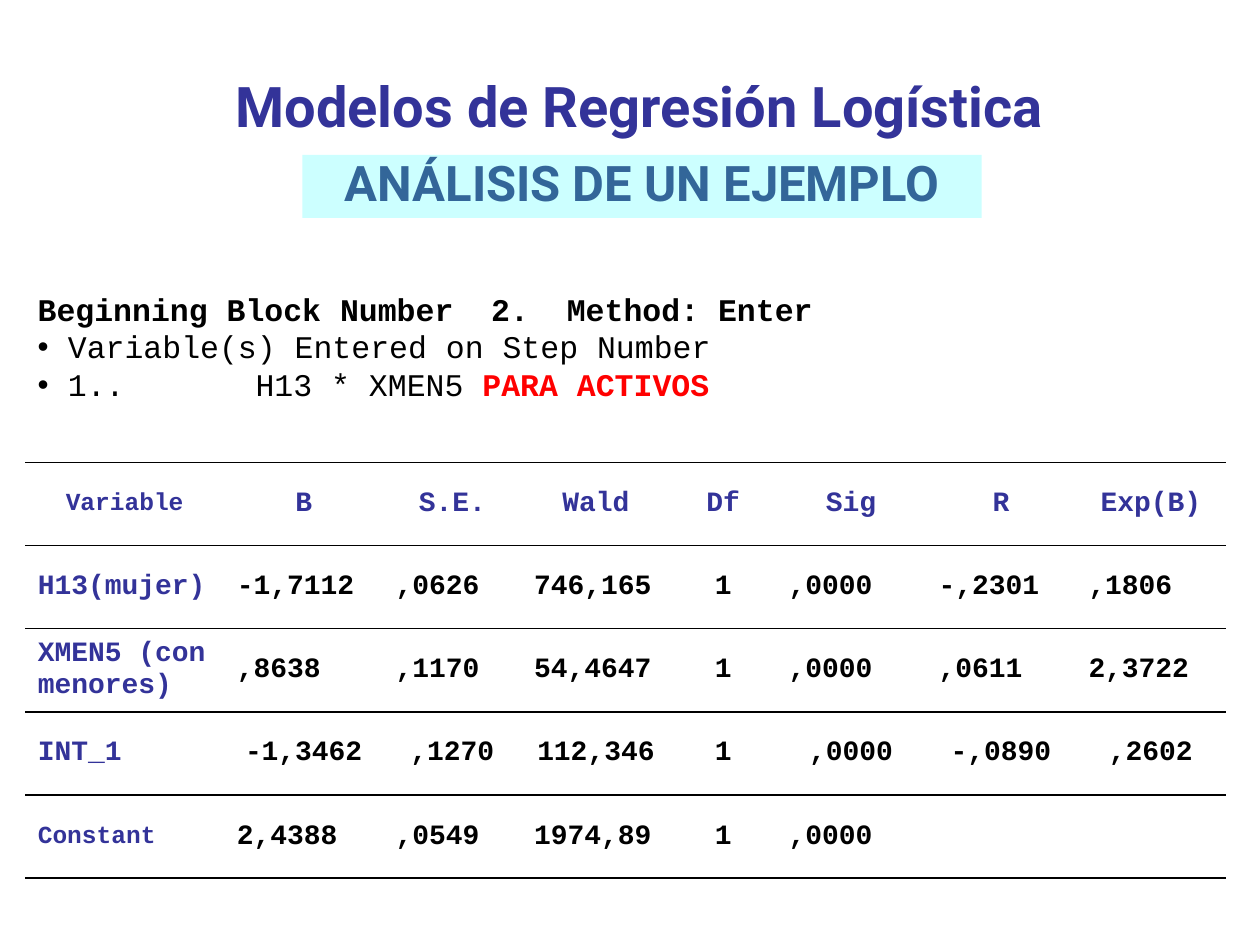
from lxml.etree import SubElement
from pptx import Presentation
from pptx.dml.color import RGBColor
from pptx.enum.shapes import MSO_SHAPE
from pptx.enum.text import MSO_ANCHOR, PP_ALIGN
from pptx.oxml import parse_xml
from pptx.oxml.ns import nsdecls, qn
from pptx.util import Inches, Pt

THEME = {
    "title": {"name": "Roboto", "size": 32, "color": "333399", "bold": True},
    "subtitle": {"name": "Roboto", "size": 28, "color": "336699", "bold": True},
    "strong": {"name": "Courier New", "size": 18, "color": "000000", "bold": True},
    "plain": {"name": "Courier New", "size": 18, "color": "000000", "bold": False},
    "alert": {"name": "Courier New", "size": 18, "color": "FF0000", "bold": True},
    "label": {"name": "Courier New", "size": 16, "color": "333399", "bold": True},
    "small label": {"name": "Courier New", "size": 14, "color": "333399", "bold": True},
    "value": {"name": "Courier New", "size": 16, "color": "000000", "bold": True},
    "band": "CCFFFF",
    "rule": "000000",
}

TITLE = "Modelos de Regresión Logística"
SUBTITLE = "ANÁLISIS DE UN EJEMPLO"
# Each line: has a bullet, then (text, style) spans
METHOD_LINES = [
    (False, [("Beginning Block Number  2.  Method: Enter", "strong")]),
    (True, [("Variable(s) Entered on Step Number", "plain")]),
    (True, [("1..\tH13 * XMEN5 ", "plain"), ("PARA ACTIVOS", "alert")]),
]
COEFFICIENTS = [
    ["Variable", "B", "S.E.", "Wald", "Df", "Sig", "R", "Exp(B)"],
    ["H13(mujer)", "-1,7112", ",0626", "746,165", "1", ",0000", "-,2301", ",1806"],
    ["XMEN5 (con menores)", ",8638", ",1170", "54,4647", "1", ",0000", ",0611", "2,3722"],
    ["INT_1", "-1,3462", ",1270", "112,346", "1", ",0000", "-,0890", ",2602"],
    ["Constant", "2,4388", ",0549", "1974,89", "1", ",0000", "", ""],
]
COLUMN_WIDTHS = [1.58, 1.26, 1.1, 1.18, 0.84, 1.19, 1.19, 1.19]
ROW_HEIGHT = 0.66
SMALL_LABELS = {"Variable", "Constant"}
DF_COLUMN = COEFFICIENTS[0].index("Df")
CENTERED_ROWS = {0, 3}
BULLET_INDENT = 0.24
TAB_STOP = 1.73


def add_span(para, text, style):
    span = para.add_run()
    span.text = text
    values = dict(THEME[style])
    span.font.color.rgb = RGBColor.from_string(values.pop("color"))
    values["size"] = Pt(values["size"])
    for name, value in values.items():
        setattr(span.font, name, value)


def add_text_box(page, *place):
    box = page.shapes.add_textbox(*map(Inches, place))
    box.text_frame.word_wrap = True
    return box.text_frame


def add_bullet(para):
    """Give a paragraph a hanging bullet and the tab stop of its second part."""
    properties = para._p.get_or_add_pPr()
    properties.set("marL", str(Inches(BULLET_INDENT)))
    properties.set("indent", str(-Inches(BULLET_INDENT)))
    SubElement(properties, qn("a:buFont"), typeface="Arial")
    SubElement(properties, qn("a:buChar"), char="•")
    tabs = SubElement(properties, qn("a:tabLst"))
    SubElement(tabs, qn("a:tab"), pos=str(Inches(TAB_STOP)), algn="l")


def rule_cell(cell):
    """Draw lines above and below a cell, and none at its sides."""
    solid = f'<a:solidFill><a:srgbClr val="{THEME["rule"]}"/></a:solidFill>'
    sides = [("lnL", "<a:noFill/>"), ("lnR", "<a:noFill/>"), ("lnT", solid), ("lnB", solid)]
    properties = cell._tc.get_or_add_tcPr()
    for index, (side, fill) in enumerate(sides):
        line = parse_xml(f'<a:{side} {nsdecls("a")} w="{Pt(1)}">{fill}</a:{side}>')
        properties.insert(index, line)


def add_headings(page):
    title = add_text_box(page, 1.77, 0.52, 7.22, 0.63)
    add_span(title.paragraphs[0], TITLE, "title")

    band = page.shapes.add_shape(MSO_SHAPE.RECTANGLE, *map(Inches, (2.4, 1.23, 5.39, 0.5)))
    band.shadow.inherit = False
    band.fill.solid()
    band.fill.fore_color.rgb = RGBColor.from_string(THEME["band"])
    band.line.fill.background()
    band.text_frame.vertical_anchor = MSO_ANCHOR.TOP
    para = band.text_frame.paragraphs[0]
    para.alignment = PP_ALIGN.CENTER
    para.line_spacing = 0.85
    add_span(para, SUBTITLE, "subtitle")


def add_coefficients(page):
    frame = page.shapes.add_table(
        len(COEFFICIENTS), len(COLUMN_WIDTHS), Inches(0.2), Inches(3.67),
        Inches(sum(COLUMN_WIDTHS)), Inches(ROW_HEIGHT * len(COEFFICIENTS)))
    table = frame.table
    table.first_row = table.horz_banding = False
    for column, width in zip(table.columns, COLUMN_WIDTHS):
        column.width = Inches(width)
    for r, texts in enumerate(COEFFICIENTS):
        table.rows[r].height = Inches(ROW_HEIGHT)
        for c, text in enumerate(texts):
            cell = table.cell(r, c)
            cell.fill.background()
            rule_cell(cell)
            cell.vertical_anchor = MSO_ANCHOR.MIDDLE
            if not text:
                continue
            para = cell.text_frame.paragraphs[0]
            centered = r == 0 or c == DF_COLUMN or (r in CENTERED_ROWS and c > 0)
            para.alignment = PP_ALIGN.CENTER if centered else PP_ALIGN.LEFT
            style = "label" if r == 0 or c == 0 else "value"
            add_span(para, text, "small label" if text in SMALL_LABELS else style)


def add_method(page):
    frame = add_text_box(page, 0.2, 2.25, 9.45, 1.04)
    for index, (bulleted, spans) in enumerate(METHOD_LINES):
        para = frame.add_paragraph() if index else frame.paragraphs[0]
        if bulleted:
            add_bullet(para)
        for text, style in spans:
            add_span(para, text, style)


def main():
    deck = Presentation()
    deck.slide_width, deck.slide_height = Inches(10), Inches(7.5)
    page = deck.slides.add_slide(deck.slide_layouts[6])
    add_headings(page)
    add_coefficients(page)
    add_method(page)
    deck.save("out.pptx")


if __name__ == "__main__":
    main()
